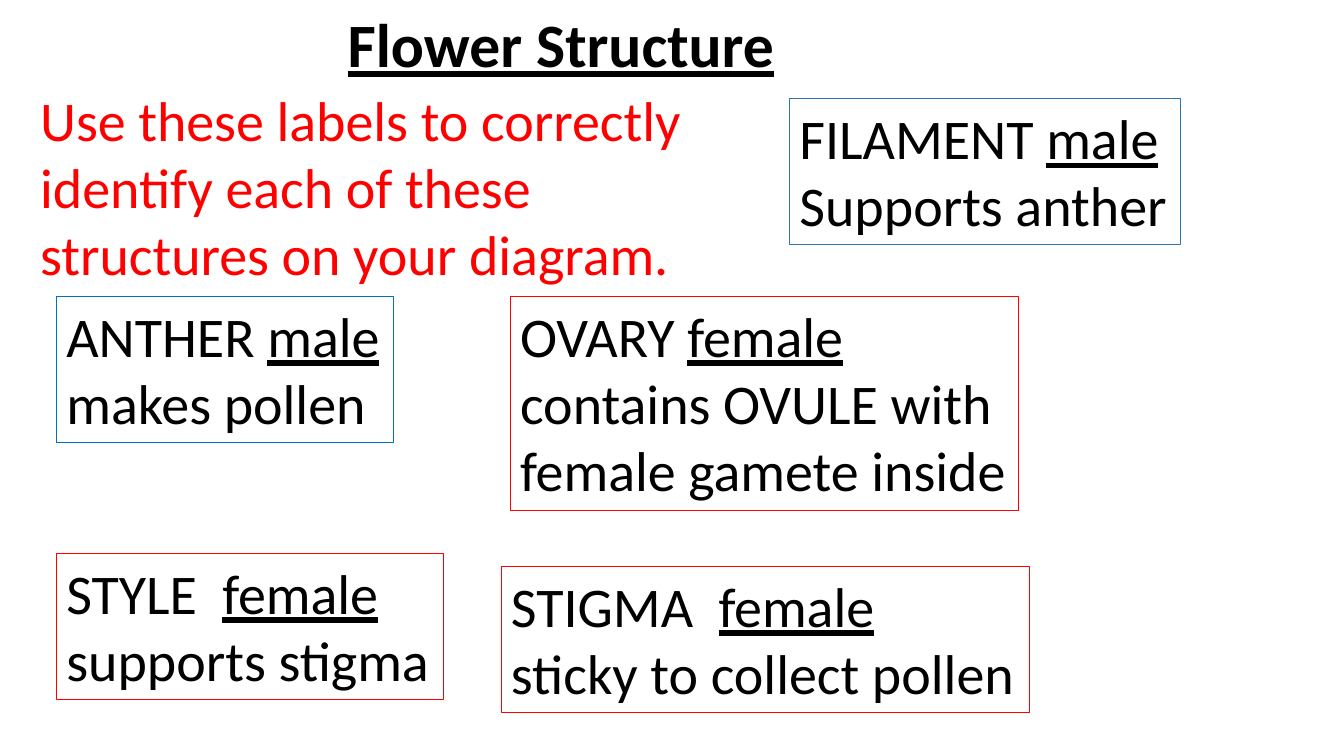
from pptx import Presentation
from pptx.dml.color import RGBColor
from pptx.enum import shapes, text
from pptx.util import Inches, Pt

FONT = "Calibri"
BLACK, RED, BLUE, STEEL = "000000", "FF0000", "0070C0", "2E75B6"

# Each label: structure, sex, function, outline colour, box, wraps
LABELS = [
    ("STIGMA  ", "female", "sticky to collect pollen", RED, (4.97, 5.62, 5.24, 1.45), False),
    ("ANTHER ", "male", "makes pollen", BLUE, (0.56, 2.94, 3.34, 1.45), False),
    ("STYLE  ", "female", "supports stigma", RED, (0.56, 5.49, 3.84, 1.45), False),
    ("OVARY ", "female", "contains OVULE with female gamete inside", RED,
     (5.06, 2.94, 5.04, 2.12), True),
    ("FILAMENT ", "male", "Supports anther", STEEL, (7.83, 0.98, 3.88, 1.45), False),
]


def color(hex_code):
    return RGBColor.from_string(hex_code)


def style_runs(paragraph, size, hex_code):
    paragraph.alignment = text.PP_ALIGN.LEFT
    for run in paragraph.runs:
        run.font.name = FONT
        run.font.size = Pt(size)
        run.font.color.rgb = color(hex_code)


def add_words(slide, box, words, size, hex_code):
    frame = slide.shapes.add_textbox(*map(Inches, box)).text_frame
    frame.word_wrap = True
    frame.text = words
    style_runs(frame.paragraphs[0], size, hex_code)
    return frame


def add_title(slide, box):
    frame = add_words(slide, box, "Flower Structure", 44, BLACK)
    frame.vertical_anchor = text.MSO_ANCHOR.MIDDLE
    heading = frame.paragraphs[0]
    heading.line_spacing = 0.9
    heading.runs[0].font.bold = True
    heading.runs[0].font.underline = True


def add_instruction(slide, box):
    frame = add_words(
        slide, box,
        "Use these labels to correctly identify each of these structures on your diagram.",
        40, RED)
    frame.auto_size = text.MSO_AUTO_SIZE.SHAPE_TO_FIT_TEXT


def add_label(slide, structure, sex, function, outline, box, wraps):
    label = slide.shapes.add_shape(shapes.MSO_SHAPE.RECTANGLE, *map(Inches, box))
    label.shadow.inherit = False
    label.fill.background()
    label.line.color.rgb = color(outline)
    label.line.width = Pt(0.75)

    frame = label.text_frame
    frame.word_wrap = wraps
    frame.auto_size = text.MSO_AUTO_SIZE.SHAPE_TO_FIT_TEXT
    frame.vertical_anchor = text.MSO_ANCHOR.TOP
    frame.text = f"{structure}\n{function}"
    sex_run = frame.paragraphs[0].add_run()
    sex_run.text = sex
    sex_run.font.underline = True
    for line in frame.paragraphs:
        style_runs(line, 40, BLACK)


def main():
    prs = Presentation()
    prs.slide_width, prs.slide_height = Inches(13.33), Inches(7.5)
    slide = prs.slides.add_slide(prs.slide_layouts[6])

    # Heading
    add_title(slide, (3.35, -0.25, 11.5, 1.45))

    # Labels to place on the diagram
    for label in LABELS:
        add_label(slide, *label)

    # Task
    add_instruction(slide, (0.3, 0.8, 6.67, 2.12))

    prs.save("out.pptx")


if __name__ == "__main__":
    main()
